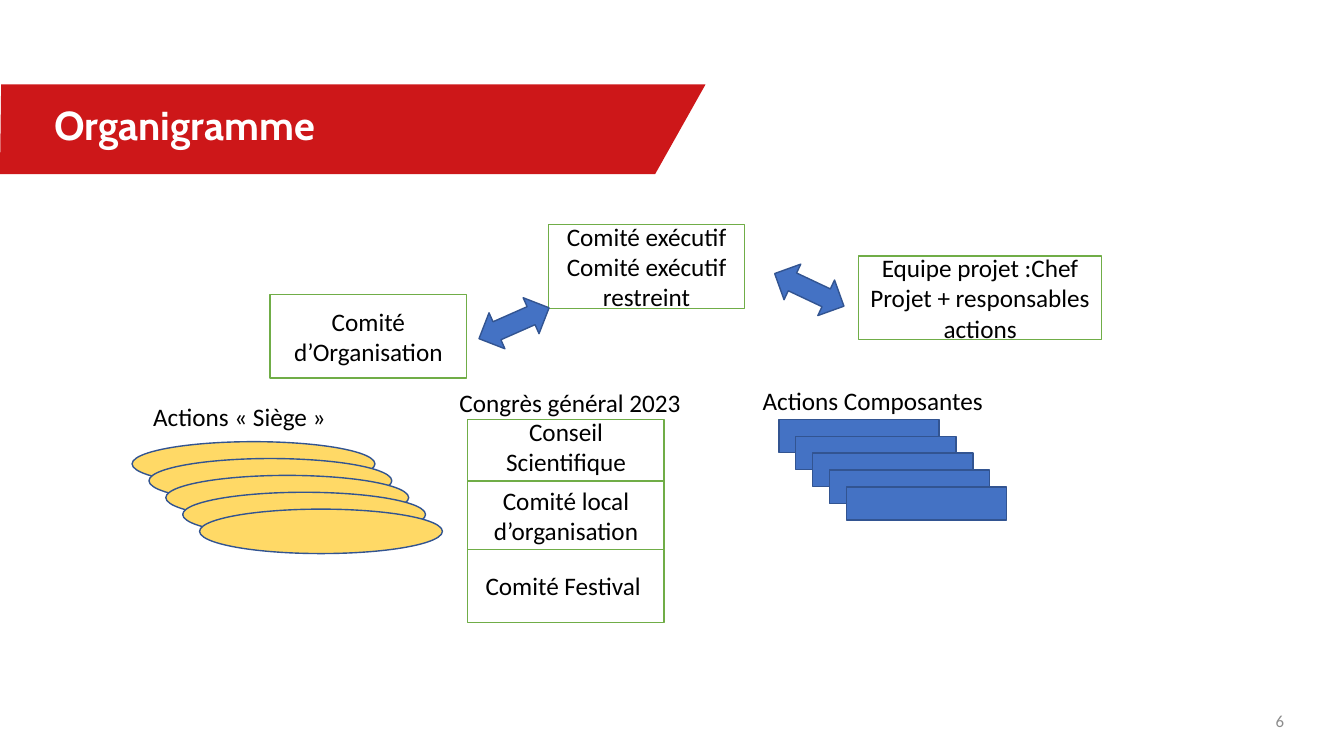
from pptx import Presentation
from pptx.dml.color import RGBColor
from pptx.enum.shapes import MSO_SHAPE as Preset
from pptx.enum.text import MSO_ANCHOR as Anchor, PP_ALIGN as Align
from pptx.util import Cm, Pt

RED = RGBColor(0xCD, 0x17, 0x19)
WHITE = RGBColor(0xFF, 0xFF, 0xFF)
BLACK = RGBColor(0x00, 0x00, 0x00)
GREY = RGBColor(0x8C, 0x8C, 0x8C)
GREEN = RGBColor(0x70, 0xAD, 0x47)
BLUE = RGBColor(0x44, 0x72, 0xC4)
NAVY = RGBColor(0x32, 0x54, 0x91)
YELLOW = RGBColor(0xFF, 0xD9, 0x66)

BOX_WIDTH, BOX_HEIGHT = 4.95, 2.11
COLUMN_LEFT = 11.79
STACK_COUNT, STACK_STEP = 5, 0.425


def write_text(shape, lines, size=18, color=BLACK, font="Calibri",
               bold=False, align=Align.LEFT, anchor=Anchor.TOP):
    frame = shape.text_frame
    frame.word_wrap = True
    frame.vertical_anchor = anchor
    frame.text = "\n".join(lines)
    for paragraph in frame.paragraphs:
        paragraph.alignment = align
        paragraph.font.size = Pt(size)
        paragraph.font.name = font
        paragraph.font.bold = bold
        paragraph.font.color.rgb = color
    return frame


def add_label(slide, text, left, top, width=6.12, height=1.02, **style):
    label = slide.shapes.add_textbox(Cm(left), Cm(top), Cm(width), Cm(height))
    return write_text(label, [text], **style)


def add_figure(slide, preset, left, top, width, height, fill, line):
    shape = slide.shapes.add_shape(preset, Cm(left), Cm(top), Cm(width), Cm(height))
    shape.shadow.inherit = False
    shape.fill.solid()
    shape.fill.fore_color.rgb = fill
    shape.line.color.rgb = line
    shape.line.width = Pt(1)
    return shape


def add_committee(slide, lines, left, top, width=BOX_WIDTH, height=BOX_HEIGHT):
    box = add_figure(slide, Preset.RECTANGLE, left, top, width, height, WHITE, GREEN)
    return write_text(box, lines, align=Align.CENTER, anchor=Anchor.MIDDLE)


def add_stack(slide, preset, left, top, width, height, fill):
    for index in range(STACK_COUNT):
        shift = index * STACK_STEP
        add_figure(slide, preset, left + shift, top + shift, width, height, fill, NAVY)


def add_double_arrow(slide, left, top, rotation):
    arrow = add_figure(slide, Preset.LEFT_RIGHT_ARROW, left, top, 1.93, 0.99, BLUE, NAVY)
    arrow.rotation = rotation


def add_title_band(slide, title):
    builder = slide.shapes.build_freeform(Cm(16.51), Cm(4.39))
    corners = [(0, 4.39), (0.03, 2.13), (17.78, 2.13)]
    builder.add_line_segments([(Cm(x), Cm(y)) for x, y in corners], close=True)
    band = builder.convert_to_shape()
    band.shadow.inherit = False
    band.fill.solid()
    band.fill.fore_color.rgb = RED
    band.line.fill.background()
    frame = add_label(slide, title, 1.12, 2.54, 16.33, 1.42,
                      size=28.8, color=WHITE, font="Cabin", bold=True)
    frame.paragraphs[0].line_spacing = 0.9


def main():
    presentation = Presentation()
    presentation.slide_width = Cm(33.87)
    presentation.slide_height = Cm(19.05)
    slide = presentation.slides.add_slide(presentation.slide_layouts[6])

    add_title_band(slide, "Organigramme")
    add_label(slide, "6", 31.04, 17.65, 1.57, size=12, color=GREY,
              align=Align.RIGHT, anchor=Anchor.MIDDLE)

    council = add_committee(slide, ["Conseil Scientifique"], COLUMN_LEFT, 10.57)
    council.margin_bottom = Cm(0.89)
    add_committee(slide, ["Comité local d’organisation"], COLUMN_LEFT, 12.12, height=1.73)
    add_committee(slide, ["Comité Festival "], COLUMN_LEFT, 13.84, height=1.85)
    add_committee(slide, ["Comité d’Organisation"], 6.81, 7.42)
    add_committee(slide, ["Comité exécutif", "Comité exécutif restreint"], 13.82, 5.66)
    add_committee(slide, ["Equipe projet :Chef Projet + responsables actions"],
                  21.64, 6.45, width=6.12)

    add_stack(slide, Preset.RECTANGLE, 19.63, 10.57, 4.04, 0.84, BLUE)
    add_stack(slide, Preset.OVAL, 3.33, 11.13, 6.12, 1.12, YELLOW)

    add_label(slide, "Congrès général 2023", 11.33, 9.63)
    add_label(slide, "Actions « Siège »", 3.61, 9.98)
    add_label(slide, "Actions Composantes", 18.97, 9.58)

    add_double_arrow(slide, 11.99, 7.65, 336.2)
    add_double_arrow(slide, 19.43, 6.81, 25.2)

    presentation.save("out.pptx")


if __name__ == "__main__":
    main()
